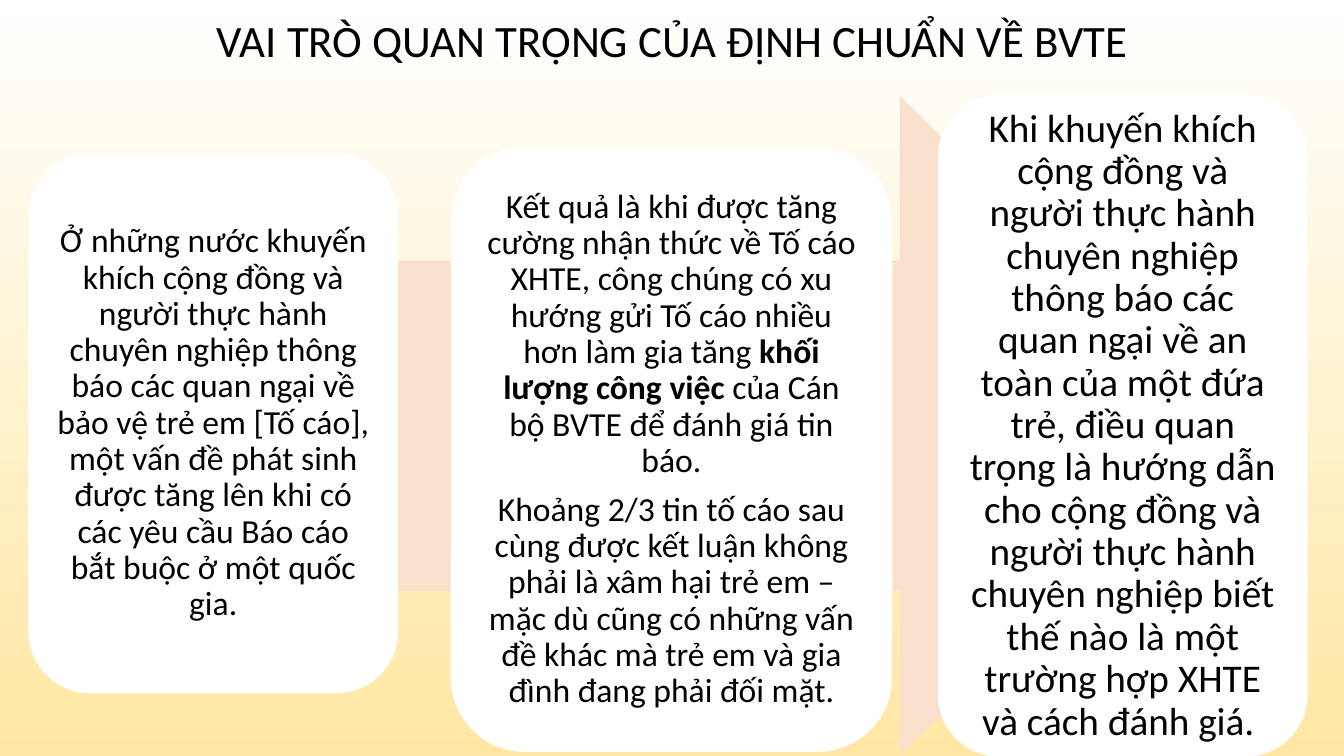
import pptx
import pptx.util
import pptx.dml.color
import pptx.enum.shapes
import pptx.enum.text

Inches, Pt = pptx.util.Inches, pptx.util.Pt
SHAPE = pptx.enum.shapes.MSO_SHAPE

COLORS = {"top": "FFFFFF", "base": "FFE7A3", "arrow": "F9E0CD",
          "card": "FFFFFF", "text": "000000"}
TITLE = "VAI TRÒ QUAN TRỌNG CỦA ĐỊNH CHUẨN VỀ BVTE"

# Each paragraph is a list of (text, bold) runs.
CARDS = [
    {"left": 0.29, "width": 3.65, "height": 5.34, "size": 24, "inset": 0.1, "paras": [
        [("Ở những nước khuyến khích cộng đồng và người thực hành chuyên nghiệp "
          "thông báo các quan ngại về bảo vệ trẻ em [Tố cáo], một vấn đề phát sinh "
          "được tăng lên khi có các yêu cầu Báo cáo bắt buộc ở một quốc gia.", False)]]},
    {"left": 4.48, "width": 4.36, "height": 5.98, "size": 24, "inset": 0.1, "paras": [
        [("Kết quả là khi được tăng cường nhận thức về Tố cáo XHTE, công chúng có xu "
          "hướng gửi Tố cáo nhiều hơn làm gia tăng ", False),
         ("khối lượng công việc ", True),
         ("của Cán bộ BVTE để đánh giá tin báo.", False)],
        [("Khoảng 2/3 tin tố cáo sau cùng được kết luận không phải là xâm hại trẻ em – "
          "mặc dù cũng có những vấn đề khác mà trẻ em và gia đình đang phải đối mặt.",
          False)]]},
    {"left": 9.31, "width": 3.65, "height": 6.55, "size": 28, "inset": 0.12, "paras": [
        [("Khi khuyến khích cộng đồng và người thực hành chuyên nghiệp thông báo các "
          "quan ngại về an toàn của một đứa trẻ, điều quan trọng là hướng dẫn cho cộng "
          "đồng và người thực hành chuyên nghiệp biết thế nào là một trường hợp XHTE "
          "và cách đánh giá. ", False)]]},
]
ARROW = (0.99, 0.95, 11.21, 6.55)


def color(name):
    return pptx.dml.color.RGBColor.from_string(COLORS[name])


def write(shape, paras, size, inset=(0.1, 0.05), after=0):
    """Fill a shape with centred text; inset is (sides, top and bottom)."""
    frame = shape.text_frame
    frame.word_wrap = True
    frame.vertical_anchor = pptx.enum.text.MSO_ANCHOR.MIDDLE
    frame.margin_left = frame.margin_right = Inches(inset[0])
    frame.margin_top = frame.margin_bottom = Inches(inset[1])
    for i, runs in enumerate(paras):
        para = frame.paragraphs[0] if i == 0 else frame.add_paragraph()
        para.alignment = pptx.enum.text.PP_ALIGN.CENTER
        para.line_spacing = 0.9
        para.space_after = Pt(after)
        for text, bold in runs:
            run = para.add_run()
            run.text = text
            run.font.name = "Calibri"
            run.font.size = Pt(size)
            run.font.bold = bold
            run.font.color.rgb = color("text")


def draw(slide, kind, box, fill):
    shape = slide.shapes.add_shape(kind, *map(Inches, box))
    shape.shadow.inherit = False
    shape.fill.solid()
    shape.fill.fore_color.rgb = color(fill)
    shape.line.fill.background()
    return shape


def main():
    deck = pptx.Presentation()
    deck.slide_width, deck.slide_height = Inches(13.33), Inches(7.5)
    slide = deck.slides.add_slide(deck.slide_layouts[6])

    back = slide.background.fill
    back.gradient()
    back.gradient_angle = 270
    for stop, name, place in zip(back.gradient_stops, ("top", "base"), (0, 1)):
        stop.color.rgb = color(name)
        stop.position = place

    title = slide.shapes.add_textbox(*map(Inches, (0.92, 0.11, 11.5, 0.64)))
    write(title, [[(TITLE, False)]], 32)

    draw(slide, SHAPE.RIGHT_ARROW, ARROW, "arrow")
    for card in CARDS:
        inset = card["inset"]
        # Centre on the arrow's axis, kept clear of the slide's lower edge.
        top = {5.34: 1.53, 5.98: 1.47, 6.55: 0.95}[card["height"]]
        box = (card["left"], top, card["width"], card["height"])
        shape = draw(slide, SHAPE.ROUNDED_RECTANGLE, box, "card")
        shape.line.color.rgb = color("card")
        shape.line.width = Pt(1.25)
        write(shape, card["paras"], card["size"], inset=(inset, inset), after=9)

    deck.save("out.pptx")


if __name__ == "__main__":
    main()
